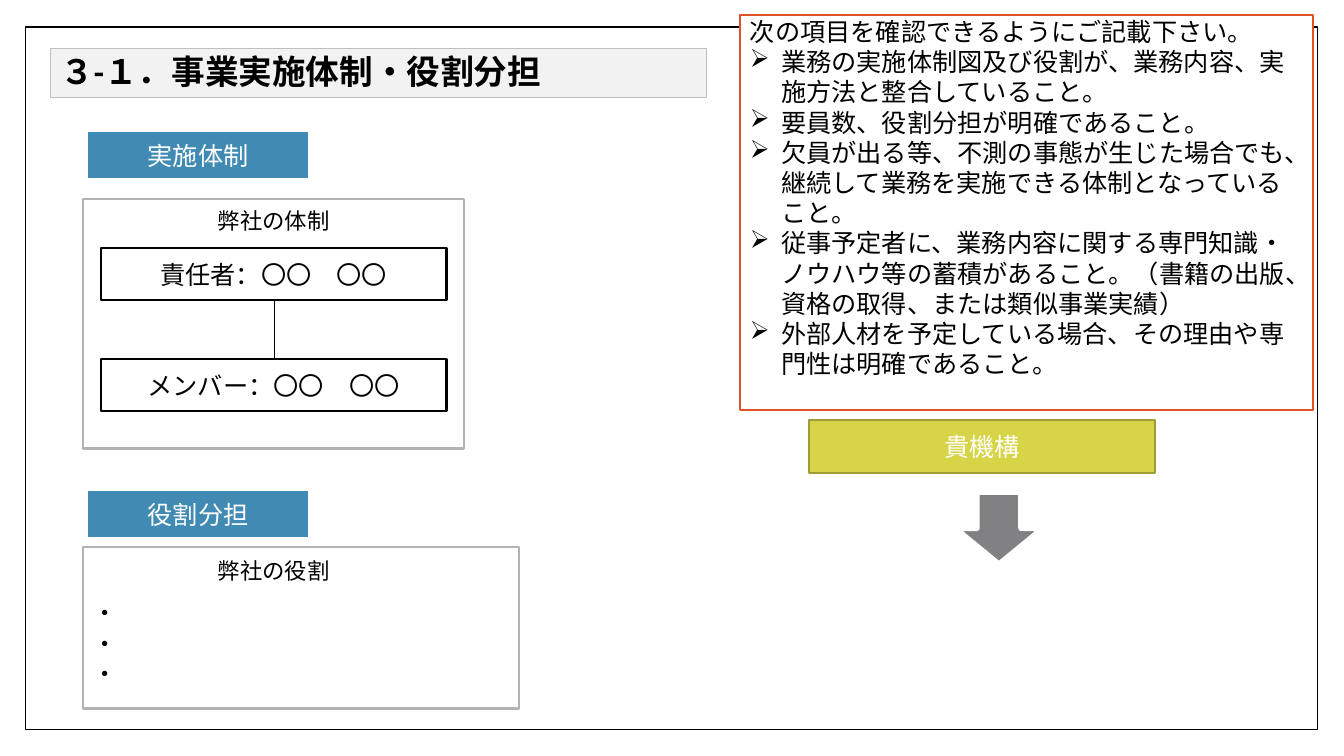
from pptx import Presentation, util as u
from pptx.dml.color import RGBColor
from pptx.enum import shapes, text
from pptx.oxml.ns import qn
from lxml import etree

COLS, ROWS = 40, 22.5
KIND = shapes.MSO_SHAPE
LEFT, MID = text.PP_ALIGN.LEFT, text.PP_ALIGN.CENTER
BLACK, WHITE, GREY, BLUE = "000000", "FFFFFF", "B3B3B5", "418AB3"


def tint(code):
    return RGBColor.from_string(code)


class Page:
    """Draws styled elements on one slide, measured in grid columns and rows."""

    def __init__(self, deck):
        self.slide = deck.slides.add_slide(deck.slide_layouts[6])
        self.wide = deck.slide_width / COLS
        self.high = deck.slide_height / ROWS
        self.font = "Calibri"

    def place(self, x, y, w, h):
        cells = (x, self.wide), (y, self.high), (w, self.wide), (h, self.high)
        return [round(n * size) for n, size in cells]

    def box(self, at, fill=None, line=BLACK, width=1.5, kind=KIND.RECTANGLE):
        shape = self.slide.shapes.add_shape(kind, *self.place(*at))
        shape.shadow.inherit = False
        if fill:
            shape.fill.solid()
            shape.fill.fore_color.rgb = tint(fill)
        else:
            shape.fill.background()
        shape.line.color.rgb = tint(line)
        shape.line.width = u.Pt(width)
        return shape

    def words(self, shape, lines, size=18, color=BLACK, align=MID, bold=False,
              space=None, mark=None):
        frame = shape.text_frame
        frame.word_wrap = True
        frame.vertical_anchor = text.MSO_ANCHOR.MIDDLE
        for i, line in enumerate(lines):
            para = frame.paragraphs[0] if i == 0 else frame.add_paragraph()
            para.alignment = align
            if space:
                para.line_spacing = space
            if mark and i:
                self.bullet(para, mark)
            run = para.add_run()
            run.text = line
            run.font.name = self.font
            run.font.size = u.Pt(size)
            run.font.bold = bold
            run.font.color.rgb = tint(color)
        return frame

    def bullet(self, para, mark):
        props = para._p.get_or_add_pPr()
        props.set("marL", str(u.Inches(0.31)))
        props.set("indent", str(-u.Inches(0.31)))
        etree.SubElement(props, qn("a:buChar")).set("char", mark)

    def label(self, at, line):
        area = self.slide.shapes.add_textbox(*self.place(*at))
        self.words(area, [line], 16)

    def link(self, x, top, end):
        x, top, _, end = self.place(x, top, 0, end)
        line = self.slide.shapes.add_connector(
            shapes.MSO_CONNECTOR.STRAIGHT, x, top, x, end)
        line.line.color.rgb = tint(BLACK)
        line.line.width = u.Pt(0.79)
        etree.SubElement(line._element.spPr, qn("a:effectLst"))


def main():
    deck = Presentation()
    deck.slide_width, deck.slide_height = u.Inches(13.33), u.Inches(7.5)
    page = Page(deck)

    page.box((0.75, 0.81, 38.46, 20.91), WHITE, width=1)
    title = page.box((1.5, 1.44, 19.53, 1.47), "F2F2F2", "BFBFBF", 0.75)
    page.words(title, ["３-１．事業実施体制・役割分担"], 24, align=LEFT,
               bold=True, space=0.9)

    for y, name in (3.84, "実施体制"), (14.52, "役割分担"):
        tab = page.box((2.52, y, 6.75, 1.56), BLUE, WHITE, 4.25)
        page.words(tab, [name], color=WHITE)

    unit = 10.29, 1.56
    lead, team = 7.38, 10.68
    for y, name in (lead, "責任者：〇〇　〇〇"), (team, "メンバー：〇〇　〇〇"):
        page.words(page.box((3, y, *unit), WHITE), [name])
    page.box((2.46, 5.91, 11.34, 7.44), line=GREY)
    page.link(8.16, lead + unit[1], team)

    client = page.box((24.09, 12.51, *unit), "D7D447", "9F9D35")
    page.words(client, ["貴機構"], color=WHITE)

    duties = page.box((2.46, 16.29, 12.99, 4.8), line=GREY)
    frame = page.words(duties, ["・"] * 3, align=LEFT)
    frame.margin_top = u.Inches(0.35)

    for y, name in (6.03, "弊社の体制"), (16.44, "弊社の役割"):
        page.label((5.52, y, 5.25, 1.08), name)

    page.box((28.41, 14.64, 2.64, 2.16), "818183", WHITE, 4.25, KIND.DOWN_ARROW)

    note = page.box((22.02, 0.45, 17.07, 11.76), WHITE, "DF5327",
                    kind=KIND.FLOWCHART_PROCESS)
    frame = page.words(note, [
        "次の項目を確認できるようにご記載下さい。",
        "業務の実施体制図及び役割が、業務内容、実施方法と整合していること。",
        "要員数、役割分担が明確であること。",
        "欠員が出る等、不測の事態が生じた場合でも、継続して業務を実施できる体制となっていること。",
        "従事予定者に、業務内容に関する専門知識・ノウハウ等の蓄積があること。"
        "（書籍の出版、資格の取得、または類似事業実績）",
        "外部人材を予定している場合、その理由や専門性は明確であること。",
    ], align=LEFT, mark="➢")
    frame.margin_bottom = u.Inches(0.35)

    deck.save("out.pptx")


if __name__ == "__main__":
    main()
